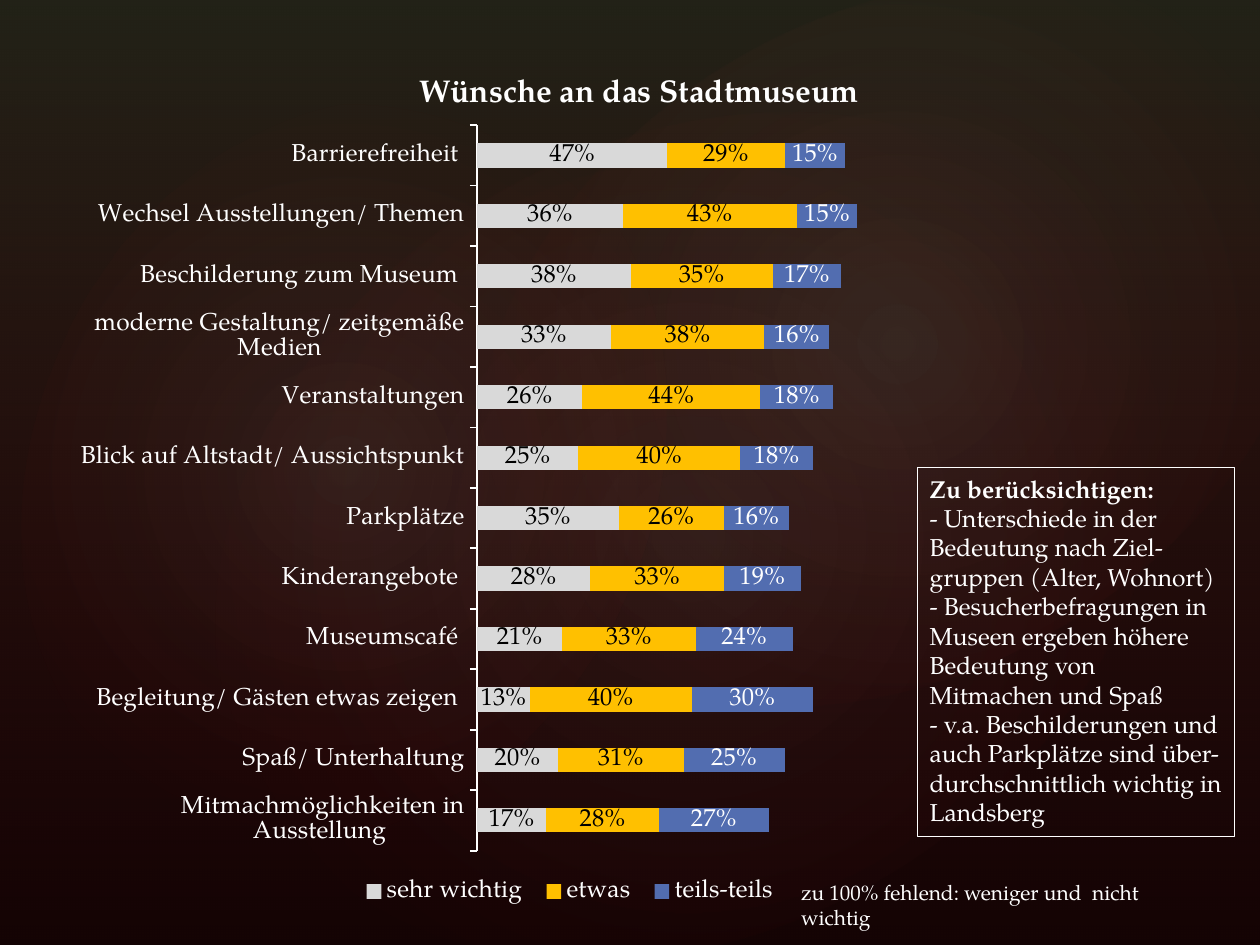
import pptx
import pptx.util
import pptx.oxml
import pptx.oxml.ns
import pptx.chart.data
import pptx.dml.color
import pptx.enum.chart
import pptx.enum.shapes
import pptx.enum.text

RGB = pptx.dml.color.RGBColor
BLACK, WHITE = RGB(0, 0, 0), RGB(255, 255, 255)
GREY, AMBER, BLUE = RGB(0xD9, 0xD9, 0xD9), RGB(0xFF, 0xC0, 0), RGB(0x52, 0x6D, 0xB0)
OLIVE, RED, SAND = RGB(0x61, 0x60, 0x42), RGB(0xD1, 0x28, 0x2E), RGB(0xD2, 0xD1, 0xBE)
FONT = "TeX Gyre Pagella"
COLUMNS, ROWS = 100, 75
qn = pptx.oxml.ns.qn

WISHES = [
    ("Barrierefreiheit ", 47, 29, 15),
    ("Wechsel Ausstellungen/ Themen", 36, 43, 15),
    ("Beschilderung zum Museum ", 38, 35, 17),
    ("moderne Gestaltung/ zeitgemäße Medien", 33, 38, 16),
    ("Veranstaltungen", 26, 44, 18),
    ("Blick auf Altstadt/ Aussichtspunkt", 25, 40, 18),
    ("Parkplätze", 35, 26, 16),
    ("Kinderangebote ", 28, 33, 19),
    ("Museumscafé ", 21, 33, 24),
    ("Begleitung/ Gästen etwas zeigen ", 13, 40, 30),
    ("Spaß/ Unterhaltung", 20, 31, 25),
    ("Mitmachmöglichkeiten in Ausstellung ", 17, 28, 27),
]
RATINGS = [("sehr wichtig", GREY, BLACK), ("etwas", AMBER, BLACK), ("teils-teils", BLUE, WHITE)]
CONSIDER = [
    "Zu berücksichtigen:",
    "- Unterschiede in der Bedeutung nach Ziel-gruppen (Alter, Wohnort)",
    "- Besucherbefragungen in Museen ergeben höhere Bedeutung von Mitmachen und Spaß",
    "- v.a. Beschilderungen und auch Parkplätze sind über-durchschnittlich wichtig in Landsberg",
]

prs = pptx.Presentation()
prs.slide_width, prs.slide_height = pptx.util.Inches(10), pptx.util.Inches(7.5)


def grid(left, top, width, height):
    """Turn columns and rows into slide lengths."""
    column, row = prs.slide_width / COLUMNS, prs.slide_height / ROWS
    return [round(n) for n in (left * column, top * row, width * column, height * row)]


def apply(target, **values):
    for key, value in values.items():
        setattr(target, key, value)


def style_font(font, size, color=WHITE, bold=False):
    apply(font, name=FONT, size=pptx.util.Pt(size), bold=bold)
    font.color.rgb = color


def write(frame, lines, size, bold_first=False):
    apply(frame, word_wrap=True, auto_size=pptx.enum.text.MSO_AUTO_SIZE.NONE,
          vertical_anchor=pptx.enum.text.MSO_ANCHOR.TOP)
    frame.text = "\n".join(lines)
    for number, paragraph in enumerate(frame.paragraphs):
        paragraph.alignment = pptx.enum.text.PP_ALIGN.LEFT
        style_font(paragraph.font, size, bold=bold_first and number == 0)


def fade(shape, stops, direction):
    """Fill with a gradient whose stops are (position, colour, opacity) in percent."""
    shape.fill.background()
    shape.line.fill.background()
    shape.shadow.inherit = False
    stop_xml = "".join(
        f'<a:gs pos="{pos * 1000}"><a:srgbClr val="{color}">'
        f'<a:alpha val="{opacity * 1000}"/></a:srgbClr></a:gs>'
        for pos, color, opacity in stops)
    gradient = pptx.oxml.parse_xml(
        f'<a:gradFill {pptx.oxml.ns.nsdecls("a")} rotWithShape="1">'
        f'<a:gsLst>{stop_xml}</a:gsLst>{direction}</a:gradFill>')
    properties = shape._element.spPr
    properties.replace(properties.find(qn("a:noFill")), gradient)


def add_backdrop(slide, box):
    slide.background.fill.solid()
    slide.background.fill.fore_color.rgb = BLACK
    kinds = pptx.enum.shapes.MSO_SHAPE
    wash = slide.shapes.add_shape(kinds.RECTANGLE, *grid(*box))
    fade(wash, [(0, OLIVE, 36), (100, RED, 10)], '<a:lin ang="5400000" scaled="0"/>')
    layers = [wash]
    # Soft round glows
    centred = ('<a:path path="circle"><a:fillToRect l="50000" t="50000" '
               'r="50000" b="50000"/></a:path>')
    for glow_box, rotation, opacity in [
        ((15, 11.4, 79.2, 62.4), 328.7, 7),
        ((-3, 12.8, 60.6, 49), 294.3, 8),
        ((35.8, 1.3, 70.9, 52), 328.7, 8),
    ]:
        glow = slide.shapes.add_shape(kinds.OVAL, *grid(*glow_box))
        glow.rotation = rotation
        fade(glow, [(0, SAND, opacity), (58, RED, 0)], centred)
        layers.append(glow)
    # Send the layers behind the title
    for depth, layer in enumerate(layers, start=2):
        slide.shapes._spTree.insert(depth, layer._element)


def add_heading(slide, box):
    heading = slide.shapes.title
    apply(heading, **dict(zip(("left", "top", "width", "height"), grid(*box))))
    write(heading.text_frame, ["Wünsche an das Stadtmuseum"], 18, bold_first=True)
    heading.text_frame.paragraphs[0].alignment = pptx.enum.text.PP_ALIGN.CENTER


def layout_xml(x, y, w, h, inner=False):
    target = '<c:layoutTarget val="inner"/>' if inner else ""
    sizes = "".join(f'<c:{key} val="{value}"/>' for key, value in zip("xywh", (x, y, w, h)))
    return pptx.oxml.parse_xml(
        f'<c:layout {pptx.oxml.ns.nsdecls("c")}><c:manualLayout>{target}'
        f'<c:xMode val="edge"/><c:yMode val="edge"/>{sizes}</c:manualLayout></c:layout>')


def place_part(part, anchor, layout):
    for old in part.findall(qn("c:layout")):
        part.remove(old)
    if anchor is None:
        part.insert(0, layout)
    else:
        anchor.addnext(layout)


def add_wishes_chart(slide, box):
    enums = pptx.enum.chart
    data = pptx.chart.data.CategoryChartData(number_format="0%")
    names, *shares = zip(*WISHES)
    data.categories = names
    for (rating, _, _), values in zip(RATINGS, shares):
        data.add_series(rating, [value / 100 for value in values])
    chart = slide.shapes.add_chart(enums.XL_CHART_TYPE.BAR_STACKED, *grid(*box), data).chart
    apply(chart, has_title=False, has_legend=True)
    style_font(chart.font, 14)

    # Bars and their labels
    plot = chart.plots[0]
    apply(plot, gap_width=150, overlap=100, vary_by_categories=False)
    for series, (_, color, label_color) in zip(plot.series, RATINGS):
        series.format.fill.solid()
        series.format.fill.fore_color.rgb = color
        labels = series.data_labels
        apply(labels, show_value=True, number_format="0%", number_format_is_linked=False,
              position=enums.XL_LABEL_POSITION.CENTER)
        style_font(labels.font, 14, label_color)

    # Axes
    apply(chart.category_axis, reverse_order=True, has_major_gridlines=False,
          major_tick_mark=enums.XL_TICK_MARK.OUTSIDE)
    chart.category_axis.format.line.width = pptx.util.Pt(1)
    chart.category_axis.format.line.color.rgb = WHITE
    apply(chart.value_axis, visible=False, has_major_gridlines=False,
          minimum_scale=0, maximum_scale=1)

    # Plot area, and a legend that ends before the remainder note
    place_part(chart._chartSpace.chart.plotArea, None,
               layout_xml(0.49, 0.03, 0.48, 0.89, inner=True))
    apply(chart.legend, position=enums.XL_LEGEND_POSITION.BOTTOM, include_in_layout=False)
    legend = chart.legend._element
    place_part(legend, legend.find(qn("c:legendPos")), layout_xml(0.34, 0.94, 0.52, 0.06))


def add_consider_panel(slide, box):
    panel = slide.shapes.add_shape(pptx.enum.shapes.MSO_SHAPE.RECTANGLE, *grid(*box))
    panel.fill.background()
    panel.shadow.inherit = False
    panel.line.color.rgb = WHITE
    panel.line.width = pptx.util.Pt(0.75)
    write(panel.text_frame, CONSIDER, 14, bold_first=True)


def add_remainder_note(slide, box):
    note = slide.shapes.add_textbox(*grid(*box))
    write(note.text_frame, ["zu 100% fehlend: weniger und  nicht wichtig"], 12)


def main():
    slide = prs.slides.add_slide(prs.slide_layouts.get_by_name("Title Only"))
    add_backdrop(slide, (0, 0, COLUMNS, ROWS))
    add_heading(slide, (5.1, 5.1, 91.3, 4))
    add_consider_panel(slide, (72.8, 37.1, 25.2, 29.3))
    add_remainder_note(slide, (62.6, 69.3, 32.7, 3))
    add_wishes_chart(slide, (5.1, 8, 66.9, 64.7))
    prs.save("out.pptx")


if __name__ == "__main__":
    main()
